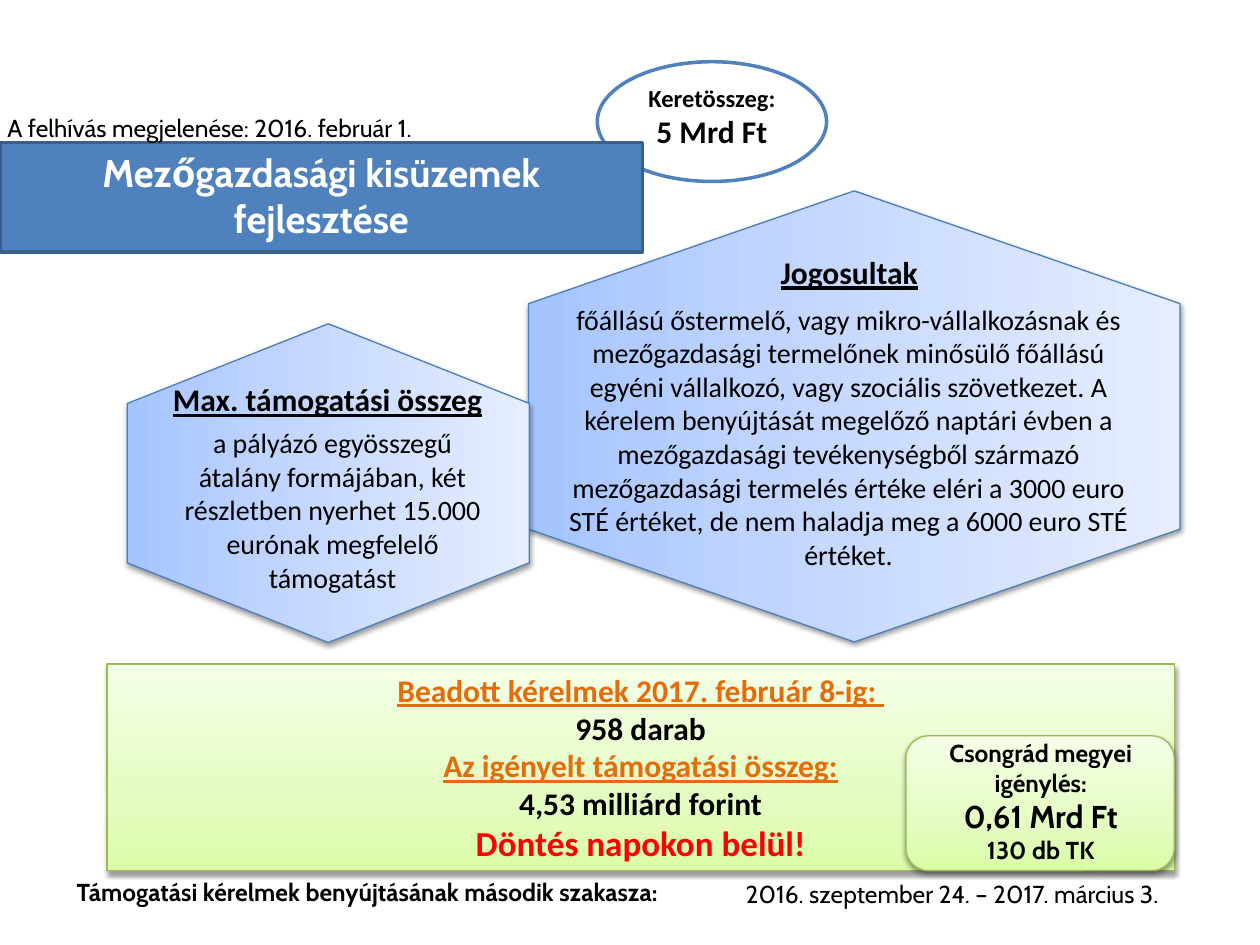
"""Build the slide on the small farm development call."""
from lxml import etree
from pptx import Presentation
from pptx.dml.color import RGBColor
from pptx.enum import shapes, text
from pptx.oxml import ns
from pptx.util import Inches, Pt

THEME = {
    "body": "Calibri", "accent": "Cabin",
    "small": 14, "medium": 16, "large": 18, "alert": 20, "title": 22,
    "black": "000000", "white": "FFFFFF", "orange": "E46C0A", "red": "FF0000",
    "blue": "4F81BD", "navy": "3A5F8C", "blue_edge": "4B7EBC", "green_edge": "98B955",
    "blue_fade": [(0, "A4C4FF"), (35, "BFD4FF"), (100, "E6EEFF")],
    "green_fade": [(0, "DAFDA7"), (35, "E4FCC2"), (100, "F5FFE7")],
    "shadow": {"blurRad": Pt(3.1), "dist": Pt(1.6), "dir": 90 * 60000},
    "shadow_opacity": 38,
}


def line(wording, size, color="black", font="body", **formats):
    return {"wording": wording, "size": size, "color": color, "font": font, "formats": formats}


BOLD = {"bold": True}
HEADING = {"bold": True, "underline": True}
SUMMARY = [
    line("Beadott kérelmek 2017. február 8-ig: ", "large", "orange", **HEADING),
    line("958 darab", "large", **BOLD),
    line("Az igényelt támogatási összeg:", "large", "orange", **HEADING),
    line("4,53 milliárd forint", "large", **BOLD),
    line("Döntés napokon belül!", "alert", "red", **BOLD),
]
TITLE = [line("Mezőgazdasági kisüzemek fejlesztése", "title", "white", "accent", **BOLD)]
SUPPORT = ("a pályázó egyösszegű átalány formájában, két részletben nyerhet 15.000 eurónak "
           "megfelelő támogatást")
ELIGIBLE = ("főállású őstermelő, vagy mikro-vállalkozásnak és mezőgazdasági termelőnek minősülő "
            "főállású egyéni vállalkozó, vagy szociális szövetkezet. A kérelem benyújtását "
            "megelőző naptári évben a mezőgazdasági tevékenységből származó mezőgazdasági "
            "termelés értéke eléri a 3000 euro STÉ értéket, de nem haladja meg a 6000 euro STÉ "
            "értéket.")

SHAPES = [
    {"kind": "OVAL", "at": (4.74, 0.49, 1.82, 0.95), "fill": "white", "edge": "blue"},
    {"kind": "RECTANGLE", "at": (0.85, 5.27, 8.47, 1.64), "fill": "green_fade",
     "edge": "green_edge", "lines": SUMMARY, "anchor": "MIDDLE"},
    {"kind": "HEXAGON", "at": (4.99, 0.72, 3.58, 5.17), "fill": "blue_fade",
     "edge": "blue_edge", "rotation": 90},
    {"kind": "HEXAGON", "at": (1.34, 2.24, 2.53, 3.19), "fill": "blue_fade",
     "edge": "blue_edge", "rotation": 90},
    {"kind": "RECTANGLE", "at": (0, 1.13, 5.1, 0.87), "fill": "blue", "edge": "navy",
     "lines": TITLE},
    {"kind": "ROUNDED_RECTANGLE", "at": (7.19, 5.84, 2.13, 1.07), "fill": "green_fade",
     "edge": "green_edge"},
]

LABELS = [
    {"at": (1.16, 2.97, 2.88, 0.4), "lines": [line("Max. támogatási összeg", "large", **HEADING)]},
    {"at": (1.26, 3.33, 2.76, 1.45), "lines": [line(SUPPORT, "medium")]},
    {"at": (6.09, 1.96, 1.3, 0.4), "wrap": False,
     "lines": [line("Jogosultak", "large", **HEADING)]},
    {"at": (4.39, 2.35, 4.69, 2.26), "lines": [line(ELIGIBLE, "medium")]},
    {"at": (-0.04, 0.73, 3.9, 0.45), "align": "LEFT", "spacing": 1.5,
     "lines": [line("A felhívás megjelenése: 2016. február 1.", "small", font="accent")]},
    {"at": (0.51, 6.91, 5.8, 0.34), "align": "LEFT",
     "lines": [line("Támogatási kérelmek benyújtásának második szakasza:", "small",
                    font="accent", **BOLD)]},
    {"at": (5.82, 6.93, 4.52, 0.34), "align": "LEFT",
     "lines": [line("2016. szeptember 24. – 2017. március 3.", "small", font="accent")]},
    {"at": (5, 0.61, 1.3, 0.64), "wrap": False,
     "lines": [line("Keretösszeg:", "small", **BOLD), line("5 Mrd Ft", "large", **BOLD)]},
    {"at": (7.27, 5.81, 1.98, 1.11),
     "lines": [line("Csongrád megyei igénylés:", "small", font="accent", **BOLD),
               line("0,61 Mrd Ft", "large", font="accent", **BOLD),
               line("130 db TK", "small", font="accent", **BOLD)]},
]


def rgb(name):
    return RGBColor.from_string(THEME[name])


def add_color(parent, color, opacity=None):
    element = etree.SubElement(parent, ns.qn("a:srgbClr"), val=color)
    if opacity is not None:
        etree.SubElement(element, ns.qn("a:alpha"), val=str(opacity * 1000))


def fade(shape, stops):
    shape.fill.gradient()
    shape.fill.gradient_angle = 90
    properties = shape._element.spPr
    stop_list = properties.find(".//" + ns.qn("a:gsLst"))
    for old_stop in list(stop_list):
        stop_list.remove(old_stop)
    for position, color in stops:
        stop = etree.SubElement(stop_list, ns.qn("a:gs"), pos=str(position * 1000))
        add_color(stop, color)
    shadow = etree.SubElement(properties.find(ns.qn("a:effectLst")), ns.qn("a:outerShdw"),
                              rotWithShape="0",
                              **{key: str(value) for key, value in THEME["shadow"].items()})
    add_color(shadow, THEME["black"], THEME["shadow_opacity"])


def write(frame, item):
    for index, entry in enumerate(item["lines"]):
        paragraph = frame.add_paragraph() if index else frame.paragraphs[0]
        paragraph.alignment = text.PP_ALIGN[item.get("align", "CENTER")]
        paragraph.line_spacing = item.get("spacing")
        run = paragraph.add_run()
        run.text = entry["wording"]
        formats = {"name": THEME[entry["font"]], "size": Pt(THEME[entry["size"]]),
                   **entry["formats"]}
        for attribute, value in formats.items():
            setattr(run.font, attribute, value)
        run.font.color.rgb = rgb(entry["color"])


def add_shape(slide, item):
    shape = slide.shapes.add_shape(shapes.MSO_SHAPE[item["kind"]], *map(Inches, item["at"]))
    shape.shadow.inherit = False
    shape.rotation = item.get("rotation", 0)
    faded = item["fill"].endswith("fade")
    if faded:
        fade(shape, THEME[item["fill"]])
    else:
        shape.fill.solid()
        shape.fill.fore_color.rgb = rgb(item["fill"])
    shape.line.color.rgb = rgb(item["edge"])
    shape.line.width = Pt(0.75 if faded else 2)
    if "lines" in item:
        shape.text_frame.vertical_anchor = text.MSO_ANCHOR[item.get("anchor", "TOP")]
        write(shape.text_frame, item)


def add_label(slide, item):
    frame = slide.shapes.add_textbox(*map(Inches, item["at"])).text_frame
    frame.word_wrap = item.get("wrap", True)
    frame.auto_size = text.MSO_AUTO_SIZE.SHAPE_TO_FIT_TEXT
    write(frame, item)


def main():
    presentation = Presentation()
    presentation.slide_width, presentation.slide_height = Inches(10), Inches(7.5)
    slide = presentation.slides.add_slide(presentation.slide_layouts[6])
    for item in SHAPES:
        add_shape(slide, item)
    for item in LABELS:
        add_label(slide, item)
    presentation.save("out.pptx")


if __name__ == "__main__":
    main()
